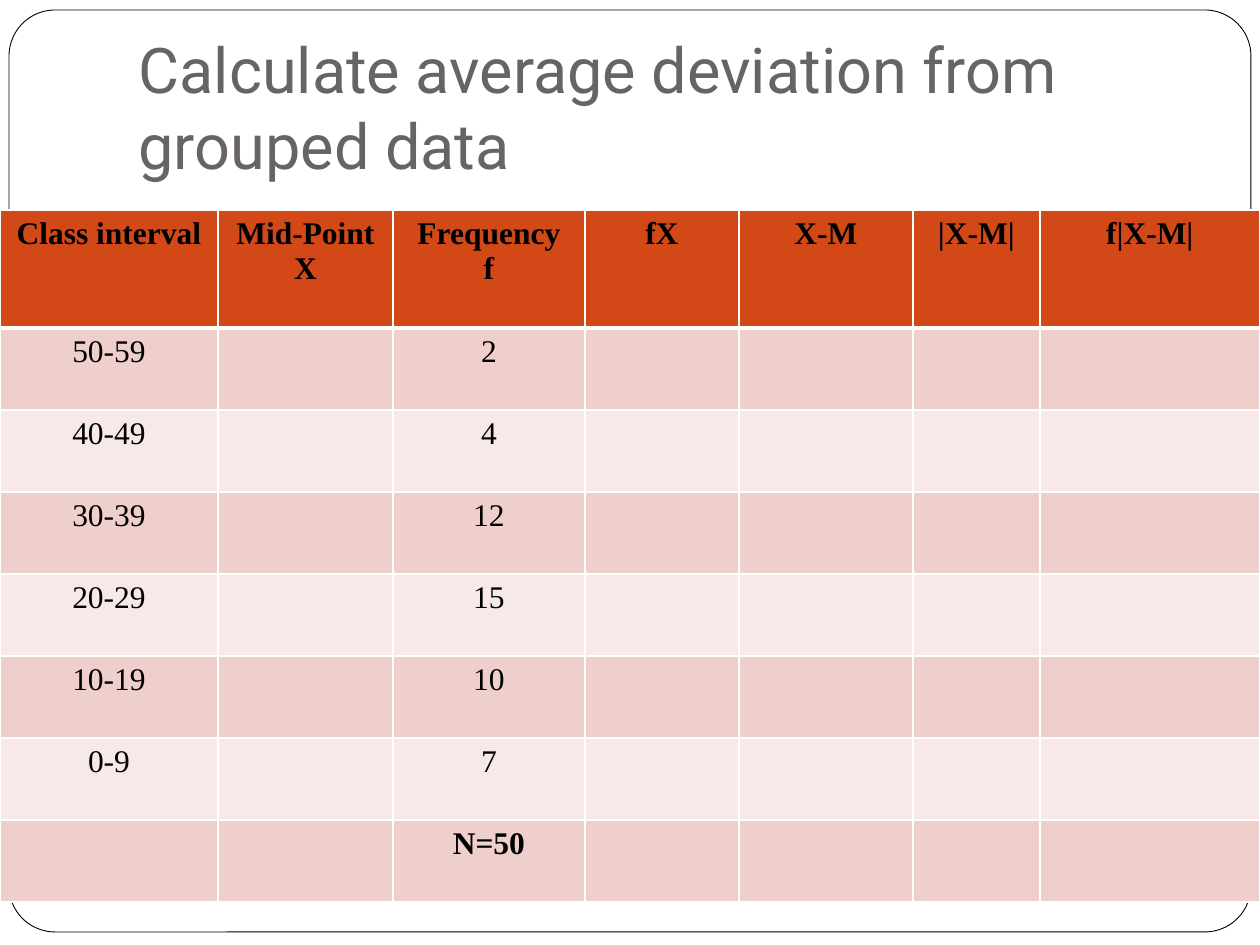
from dataclasses import dataclass

from lxml import etree
from pptx import Presentation
from pptx.dml.color import RGBColor
from pptx.enum.shapes import MSO_SHAPE
from pptx.enum.text import MSO_ANCHOR, MSO_AUTO_SIZE, PP_ALIGN
from pptx.oxml.ns import qn
from pptx.util import Emu, Pt

ROUNDED = MSO_SHAPE.ROUNDED_RECTANGLE
LEFT, CENTER = PP_ALIGN.LEFT, PP_ALIGN.CENTER
BOTTOM, NO_FIT = MSO_ANCHOR.BOTTOM, MSO_AUTO_SIZE.NONE

WHITE = RGBColor(0xFF, 0xFF, 0xFF)
BLACK = RGBColor(0x00, 0x00, 0x00)
GRAY = RGBColor(0x69, 0x64, 0x64)
ORANGE = RGBColor(0xD3, 0x48, 0x17)
BANDS = (RGBColor(0xEF, 0xCF, 0xCC), RGBColor(0xF7, 0xE9, 0xE8))

PX_PER_INCH = 126
HEADER_HEIGHT, ROW_HEIGHT = 118, 82


@dataclass(frozen=True)
class Column:
    heading: str
    width: int


@dataclass(frozen=True)
class ClassRow:
    interval: str
    frequency: str
    bold: bool = False


COLUMNS = [
    Column("Class interval", 218),
    Column("Mid-Point\nX", 175),
    Column("Frequency\nf", 192),
    Column("fX", 154),
    Column("X-M", 174),
    Column("|X-M|", 127),
    Column("f|X-M|", 220),
]
CLASS_ROWS = [
    ClassRow("50-59", "2"),
    ClassRow("40-49", "4"),
    ClassRow("30-39", "12"),
    ClassRow("20-29", "15"),
    ClassRow("10-19", "10"),
    ClassRow("0-9", "7"),
    ClassRow("", "N=50", bold=True),
]


def px(length: int) -> Emu:
    return Emu(round(length * 914400 / PX_PER_INCH))


def write_text(frame, text: str, *, font: str = "Times New Roman", size: int = 18,
               color: RGBColor = BLACK, bold: bool = False, align=CENTER) -> None:
    frame.text = text
    for paragraph in frame.paragraphs:
        paragraph.alignment = align
        for style in (paragraph.font, *(run.font for run in paragraph.runs)):
            style.name, style.size, style.bold = font, Pt(size), bold
            style.color.rgb = color


def set_borders(cell, bottom: int) -> None:
    properties = cell._tc.get_or_add_tcPr()
    for side, points in (("L", 1), ("R", 1), ("T", 1), ("B", bottom)):
        line = etree.SubElement(properties, qn(f"a:ln{side}"), w=str(Pt(points)))
        fill = etree.SubElement(line, qn("a:solidFill"))
        etree.SubElement(fill, qn("a:srgbClr"), val=str(WHITE))


def draw_cell(cell, text: str, fill: RGBColor, *, bold: bool = False,
              bottom: int = 1) -> None:
    set_borders(cell, bottom)
    cell.fill.solid()
    cell.fill.fore_color.rgb = fill
    write_text(cell.text_frame, text, bold=bold)


def draw_title(slide) -> None:
    title = slide.shapes.title
    title.left, title.top, title.width, title.height = map(px, (126, 38, 1071, 157))
    frame = title.text_frame
    frame.auto_size, frame.word_wrap = NO_FIT, True
    frame.vertical_anchor = BOTTOM
    frame.margin_bottom = px(13)
    write_text(frame, "Calculate average deviation from grouped data",
               font="Roboto", size=36, color=GRAY, align=LEFT)


def draw_frame(slide) -> None:
    border = slide.shapes.add_shape(ROUNDED, *map(px, (9, 10, 1242, 922)))
    border.adjustments[0] = 0.05
    border.shadow.inherit = False
    border.fill.solid()
    border.fill.fore_color.rgb = WHITE
    border.line.color.rgb = BLACK
    border.line.width = Pt(0.5)
    # Keep the frame behind the title
    slide.shapes.title.element.addprevious(border.element)


def draw_table(slide) -> None:
    height = HEADER_HEIGHT + ROW_HEIGHT * len(CLASS_ROWS)
    table = slide.shapes.add_table(len(CLASS_ROWS) + 1, len(COLUMNS),
                                   *map(px, (0, 210, 1260, height))).table
    # Header row
    table.rows[0].height = px(HEADER_HEIGHT)
    for index, column in enumerate(COLUMNS):
        table.columns[index].width = px(column.width)
        draw_cell(table.cell(0, index), column.heading, ORANGE, bold=True, bottom=3)
    # Class rows; only the interval and the frequency are given
    for row, entry in enumerate(CLASS_ROWS, start=1):
        table.rows[row].height = px(ROW_HEIGHT)
        given = {0: entry.interval, 2: entry.frequency}
        for index in range(len(COLUMNS)):
            draw_cell(table.cell(row, index), given.get(index, ""),
                      BANDS[(row - 1) % 2], bold=entry.bold)


def main() -> None:
    deck = Presentation()
    deck.slide_width, deck.slide_height = px(1260), px(945)
    slide = deck.slides.add_slide(deck.slide_layouts.get_by_name("Title Only"))
    draw_title(slide)
    draw_frame(slide)
    draw_table(slide)
    deck.save("out.pptx")


if __name__ == "__main__":
    main()
